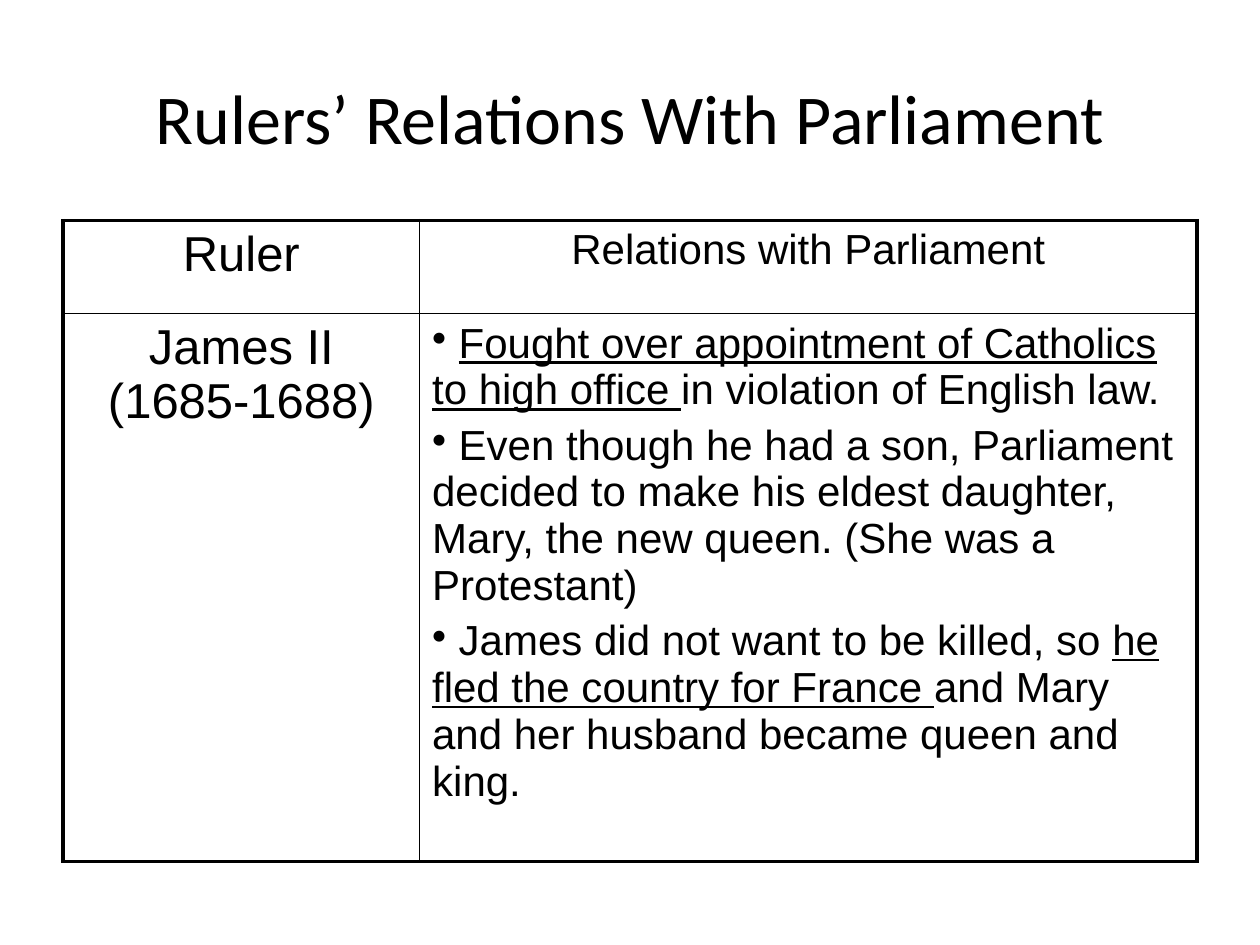
from lxml import etree
from pptx import Presentation
from pptx.dml.color import RGBColor
from pptx.enum import text
from pptx.oxml import ns
from pptx.util import Inches, Pt

BLACK = RGBColor(0, 0, 0)
WHITE = RGBColor(255, 255, 255)
OUTER, INNER = Pt(2.25), Pt(1)


def set_borders(cell, widths):
    """Draw the left, right, top and bottom borders in the given widths."""
    properties = cell._tc.get_or_add_tcPr()
    for position, (side, width) in enumerate(zip("LRTB", widths)):
        line = etree.Element(ns.qn(f"a:ln{side}"), w=str(int(width)))
        fill = etree.SubElement(line, ns.qn("a:solidFill"))
        etree.SubElement(fill, ns.qn("a:srgbClr"), val=str(BLACK))
        properties.insert(position, line)


def add_spans(para, spans, size, bullet=False):
    """Fill a paragraph with (words, underlined) spans, spaced 20% before."""
    properties = para._p.get_or_add_pPr()
    before = etree.SubElement(properties, ns.qn("a:spcBef"))
    etree.SubElement(before, ns.qn("a:spcPct"), val="20000")
    if bullet:
        etree.SubElement(properties, ns.qn("a:buChar"), char="•")
    else:
        para.alignment = text.PP_ALIGN.CENTER
    for words, underlined in spans:
        for index, line in enumerate(words.split("\n")):
            if index:
                para.add_line_break()
            span = para.add_run()
            span.text = line
            span.font.name = "Arial"
            span.font.size = Pt(size)
            span.font.color.rgb = BLACK
            span.font.underline = underlined


deck = Presentation()
deck.slide_width, deck.slide_height = Inches(10), Inches(7.5)
page = deck.slides.add_slide(deck.slide_layouts[5])

title = page.shapes.title
title.left, title.top = Inches(0.5), Inches(0.3)
title.width, title.height = Inches(9), Inches(1.25)
title.text_frame.text = "Rulers’ Relations With Parliament"
title.text_frame.vertical_anchor = text.MSO_ANCHOR.MIDDLE
heading = title.text_frame.paragraphs[0]
heading.alignment = text.PP_ALIGN.CENTER
heading.runs[0].font.name = "Calibri"
heading.runs[0].font.size = Pt(40)
heading.runs[0].font.color.rgb = BLACK

table = page.shapes.add_table(
    2, 2, Inches(0.5), Inches(1.75), Inches(9), Inches(5.09)).table
for column, width in zip(table.columns, (2.83, 6.17)):
    column.width = Inches(width)
for row, height in zip(table.rows, (0.74, 4.35)):
    row.height = Inches(height)

for r in range(2):
    for c in range(2):
        cell = table.cell(r, c)
        cell.fill.solid()
        cell.fill.fore_color.rgb = WHITE
        on_edge = (c == 0, c == 1, r == 0, r == 1)
        set_borders(cell, [OUTER if edge else INNER for edge in on_edge])

labels = [
    (0, 0, "Ruler", 28),
    (0, 1, "Relations with Parliament", 24),
    (1, 0, "James II\n(1685-1688)", 28),
]
for r, c, words, size in labels:
    add_spans(table.cell(r, c).text_frame.paragraphs[0], [(words, False)], size)

relations = [
    [(" ", False),
     ("Fought over appointment of Catholics to high office ", True),
     ("in violation of English law.", False)],
    [(" Even though he had a son, Parliament decided to make his eldest "
      "daughter, Mary, the new queen. (She was a Protestant)", False)],
    [(" James did not want to be killed, so ", False),
     ("he fled the country for France ", True),
     ("and Mary and her husband became queen and king.", False)],
]
frame = table.cell(1, 1).text_frame
for index, spans in enumerate(relations):
    para = frame.add_paragraph() if index else frame.paragraphs[0]
    add_spans(para, spans, 24, bullet=True)

deck.save("out.pptx")
